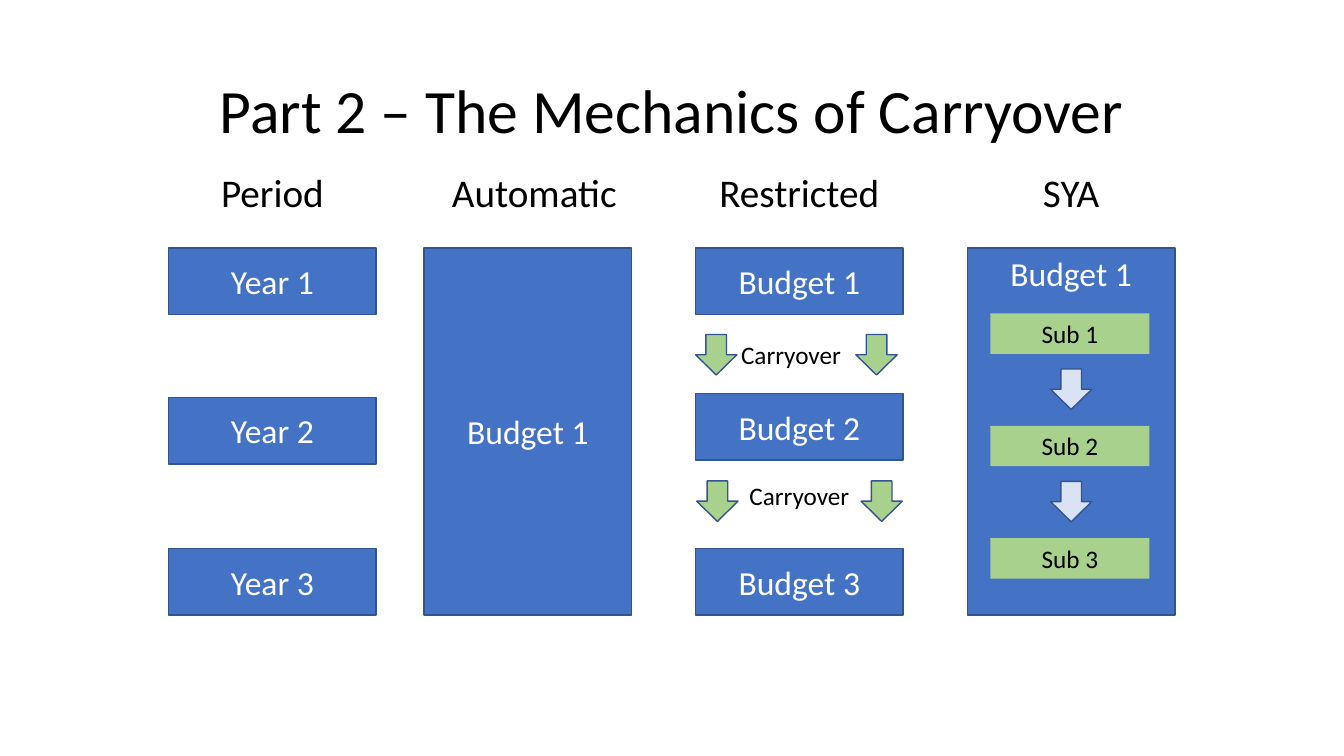
from pptx import Presentation
from pptx.dml.color import RGBColor
from pptx.enum.shapes import MSO_SHAPE
from pptx.enum.text import MSO_ANCHOR, PP_ALIGN
from pptx.util import Cm, Pt

RECTANGLE = MSO_SHAPE.RECTANGLE
DOWN_ARROW = MSO_SHAPE.DOWN_ARROW
TOP, MIDDLE = MSO_ANCHOR.TOP, MSO_ANCHOR.MIDDLE
CENTER = PP_ALIGN.CENTER

FONT = "Calibri"
BLACK, WHITE = "000000", "FFFFFF"
BLUE, OUTLINE = "4472C4", "325491"
GREEN, PALE_BLUE = "A9D18E", "DAE3F3"

# Lengths in centimetres
COLUMN_TOP, COLUMN_WIDTH, COLUMN_HEIGHT = 6.25, 5.23, 9.25
HEADING_RISE, HEADING_HEIGHT = 2.14, 1.45
BUDGET_HEIGHT = 1.68
ARROW_WIDTH, SMALL_HEIGHT = 1.04, 1.02


def color(hex_string):
    return RGBColor.from_string(hex_string)


def write(shape, text, size, text_color, anchor=MIDDLE):
    frame = shape.text_frame
    frame.word_wrap = True
    frame.vertical_anchor = anchor
    paragraph = frame.paragraphs[0]
    paragraph.alignment = CENTER
    run = paragraph.add_run()
    run.text = text
    run.font.name = FONT
    run.font.size = Pt(size)
    run.font.color.rgb = color(text_color)
    return paragraph


def add_label(slide, box, text, size):
    text_box = slide.shapes.add_textbox(*map(Cm, box))
    write(text_box, text, size, BLACK, TOP)


def add_block(slide, kind, box, fill, outline=OUTLINE):
    shape = slide.shapes.add_shape(kind, *map(Cm, box))
    shape.shadow.inherit = False
    shape.fill.solid()
    shape.fill.fore_color.rgb = color(fill)
    if outline:
        shape.line.color.rgb = color(outline)
        shape.line.width = Pt(1)
    else:
        shape.line.fill.background()
    return shape


def add_arrow(slide, left, top, fill):
    add_block(slide, DOWN_ARROW, (left, top, ARROW_WIDTH, SMALL_HEIGHT), fill)


def add_budget(slide, box, text, anchor=MIDDLE):
    write(add_block(slide, RECTANGLE, box, BLUE), text, 24, WHITE, anchor)


def add_title(slide, box, text):
    title = slide.shapes.title
    title.left, title.top, title.width, title.height = map(Cm, box)
    write(title, text, 44, BLACK).line_spacing = 0.9


def add_heading(slide, box, text, shift=0):
    left, top, width, _ = box
    add_label(slide, (left + shift, top - HEADING_RISE, width, HEADING_HEIGHT), text, 28)


def add_stack(slide, box, name, offsets):
    left, top, width, _ = box
    for number, offset in enumerate(offsets, start=1):
        add_budget(slide, (left, top + offset, width, BUDGET_HEIGHT), f"{name} {number}")


def add_period_column(slide, box):
    add_heading(slide, box, "Period")
    add_stack(slide, box, "Year", (0, 3.76, 7.57))


def add_automatic_column(slide, box):
    add_heading(slide, box, "Automatic", shift=0.16)
    add_budget(slide, box, "Budget 1")


def add_restricted_column(slide, box):
    left, top, width, _ = box
    add_heading(slide, box, "Restricted")
    add_stack(slide, box, "Budget", (0, 3.66, 7.57))
    # Carryover between budgets: arrow top, arrow lefts, label top, label shift
    carryovers = (
        (2.18, (0, 4.04), 2.18, -0.21),
        (5.87, (0.03, 4.17), 5.74, 0),
    )
    for arrow_top, arrow_lefts, label_top, label_shift in carryovers:
        for arrow_left in arrow_lefts:
            add_arrow(slide, left + arrow_left, top + arrow_top, GREEN)
        label_box = (left + label_shift, top + label_top, width, SMALL_HEIGHT)
        add_label(slide, label_box, "Carryover", 18)


def add_sya_column(slide, box):
    left, top, width, _ = box
    add_heading(slide, box, "SYA")
    add_budget(slide, box, "Budget 1", TOP)
    # Sub-accounts at an equal pitch, with an arrow after all but the last
    sub_width, pitch, count = 4.01, 2.83, 3
    for index in range(count):
        sub_top = top + 1.65 + index * pitch
        sub_box = (left + 0.58, sub_top, sub_width, SMALL_HEIGHT)
        sub = add_block(slide, RECTANGLE, sub_box, GREEN, outline=None)
        write(sub, f"Sub {index + 1}", 18, BLACK, TOP)
        if index < count - 1:
            add_arrow(slide, left + (width - ARROW_WIDTH) / 2, sub_top + 1.4, PALE_BLUE)


def main():
    presentation = Presentation()
    presentation.slide_width, presentation.slide_height = Cm(33.87), Cm(19.05)
    slide = presentation.slides.add_slide(presentation.slide_layouts[5])
    add_title(slide, (2.33, 1.01, 29.21, 3.68), "Part 2 – The Mechanics of Carryover")
    columns = (
        (4.25, add_period_column),
        (10.69, add_automatic_column),
        (17.53, add_restricted_column),
        (24.38, add_sya_column),
    )
    for left, add_column in columns:
        add_column(slide, (left, COLUMN_TOP, COLUMN_WIDTH, COLUMN_HEIGHT))
    presentation.save("out.pptx")


if __name__ == "__main__":
    main()
